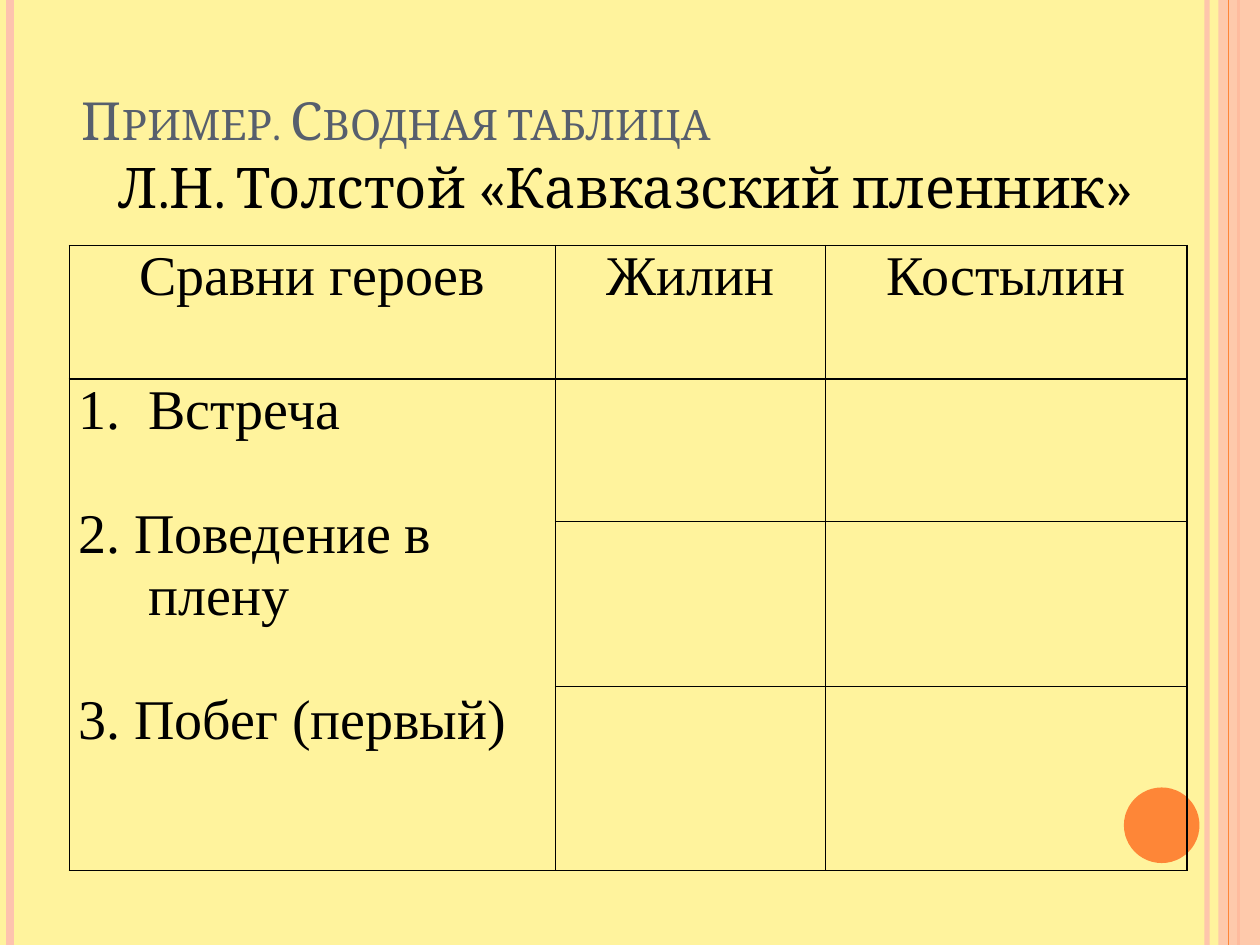
from pptx import Presentation
from pptx.dml.color import RGBColor
from pptx.enum.shapes import MSO_CONNECTOR as CONN, MSO_SHAPE as SHAPE
from pptx.enum.text import MSO_ANCHOR as ANCHOR, MSO_AUTO_SIZE as AUTO, PP_ALIGN as ALIGN
from pptx.oxml.ns import qn
from pptx.util import Inches, Pt
from lxml.etree import SubElement

CREAM = RGBColor(0xFF, 0xF3, 0x9D)
PEACH = RGBColor(0xFE, 0xC3, 0xAE)
ORANGE = RGBColor(0xFE, 0x86, 0x37)
SLATE = RGBColor(0x57, 0x5F, 0x6D)
BLACK = RGBColor(0, 0, 0)

HEADING = {"name": "Cambria", "size": Pt(30), "bold": False}
SUBTITLE = {"name": "Cambria", "size": Pt(32)}
CELL = {"name": "Times New Roman", "size": Pt(32), "bold": False}
CELL_MARGINS = {"margin_left": Inches(0.07), "margin_right": Inches(0.07),
                "margin_top": 0, "margin_bottom": 0}


class SlideBuilder:
    def __init__(self, prs):
        self.s = prs.slides.add_slide(prs.slide_layouts[5])
        self.height = prs.slide_height / Inches(1)
        self.s.background.fill.solid()
        self.s.background.fill.fore_color.rgb = CREAM

    @staticmethod
    def box(*inches):
        return [Inches(v) for v in inches]

    @staticmethod
    def set_alpha(fill, percent):
        """Make the solid colour under a fill or line element translucent."""
        color = next(fill.iter(qn("a:srgbClr")))
        SubElement(color, qn("a:alpha"), val=str(percent * 1000))

    def add_text(self, p, text, style, color, align):
        p.alignment = align
        r = p.add_run()
        r.text = text
        for key, value in style.items():
            setattr(r.font, key, value)
        r.font.color.rgb = color
        return r

    def stripe(self, x, color, width, alpha=100):
        line = self.s.shapes.add_connector(
            CONN.STRAIGHT, *self.box(x, 0, x, self.height))
        line.line.color.rgb = color
        line.line.width = Pt(width)
        sp_pr = line._element.spPr
        SubElement(sp_pr, qn("a:effectLst"))
        if alpha < 100:
            self.set_alpha(sp_pr, alpha)

    def shape(self, kind, at, color, alpha=100):
        sp = self.s.shapes.add_shape(kind, *self.box(*at))
        sp.shadow.inherit = False
        sp.fill.solid()
        sp.fill.fore_color.rgb = color
        sp.line.fill.background()
        if alpha < 100:
            self.set_alpha(sp._element.spPr, alpha)

    def title(self, text, at):
        sp = self.s.shapes.title
        sp.left, sp.top, sp.width, sp.height = self.box(*at)
        tf = sp.text_frame
        tf.auto_size = AUTO.NONE
        tf.vertical_anchor = ANCHOR.BOTTOM
        r = self.add_text(tf.paragraphs[0], text, HEADING, SLATE, ALIGN.LEFT)
        r._r.get_or_add_rPr().set("cap", "small")

    def text(self, text, at):
        tf = self.s.shapes.add_textbox(*self.box(*at)).text_frame
        tf.word_wrap = True
        tf.vertical_anchor = ANCHOR.MIDDLE
        self.add_text(tf.paragraphs[0], text, SUBTITLE, BLACK, ALIGN.CENTER)

    def border(self, cell):
        tc_pr = cell._tc.get_or_add_tcPr()
        for i, side in enumerate(("a:lnL", "a:lnR", "a:lnT", "a:lnB")):
            ln = tc_pr.makeelement(qn(side), {"w": str(Pt(1))})
            fill = SubElement(ln, qn("a:solidFill"))
            SubElement(fill, qn("a:srgbClr"), val=str(BLACK))
            tc_pr.insert(i, ln)

    def table(self, at, cols, rows, header, topics):
        tbl = self.s.shapes.add_table(len(rows), len(cols), *self.box(*at)).table
        tbl.first_row = tbl.horz_banding = False
        for col, width in zip(tbl.columns, cols):
            col.width = Inches(width)
        for row, height in zip(tbl.rows, rows):
            row.height = Inches(height)
        for cell in tbl.iter_cells():
            cell.fill.background()
            self.border(cell)
            for key, value in CELL_MARGINS.items():
                setattr(cell, key, value)

        # Header row
        for i, name in enumerate(header):
            self.add_text(tbl.cell(0, i).text_frame.paragraphs[0],
                          name, CELL, BLACK, ALIGN.CENTER)

        # Topics share one tall cell; the first has an automatic number
        first = tbl.cell(1, 0)
        first.merge(tbl.cell(len(rows) - 1, 0))
        tf = first.text_frame
        for i, topic in enumerate(topics):
            p = tf.add_paragraph() if i else tf.paragraphs[0]
            self.add_text(p, topic, CELL, BLACK, ALIGN.LEFT if i else ALIGN.JUSTIFY)
            p.space_before = Pt(35.4 if i else 0)
            p_pr = p._p.get_or_add_pPr()
            p_pr.set("marL", str(Inches(0.56)))
            p_pr.set("indent", str(-Inches(0.56)))
            if i == 0:
                SubElement(p_pr, qn("a:buAutoNum"), type="arabicPeriod")


def main():
    prs = Presentation()
    prs.slide_width, prs.slide_height = Inches(10), Inches(7.5)
    b = SlideBuilder(prs)

    # Side stripes and circle
    b.stripe(9.58, PEACH, 3, alpha=93)
    b.stripe(0.08, PEACH, 4.5)
    b.stripe(9.83, ORANGE, 1.5)
    b.shape(SHAPE.RECTANGLE, (9.67, 0, 0.33, 7.5), PEACH, alpha=87)
    b.stripe(9.75, ORANGE, 0.75)
    b.shape(SHAPE.OVAL, (8.92, 6.25, 0.6, 0.6), ORANGE)

    # Title
    b.title("Пример. Сводная таблица", (0.55, 0, 9, 1.25))

    # Comparison table
    b.table((0.55, 1.95, 8.87, 4.96),
            cols=(3.86, 2.14, 2.87), rows=(1.06, 1.13, 1.31, 1.46),
            header=("Сравни героев", "Жилин", "Костылин"),
            topics=("Встреча", "2. Поведение в плену", "3. Побег (первый)"))

    # Subtitle
    b.text("Л.Н. Толстой «Кавказский пленник»", (0.47, 1.17, 9, 0.62))
    prs.save("out.pptx")


if __name__ == "__main__":
    main()
